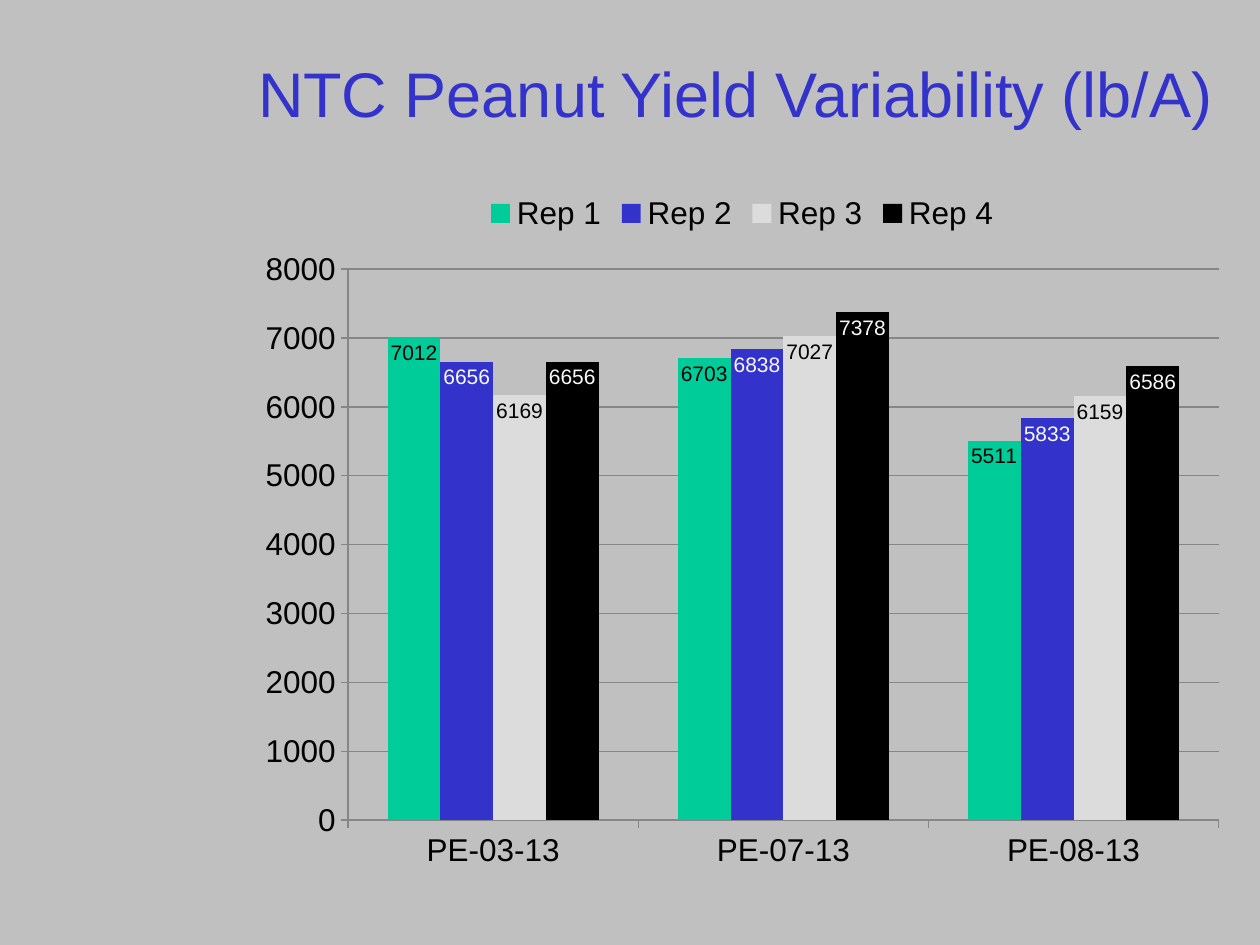
"""Build a slide with a clustered column chart of peanut yields."""
import pptx
import pptx.chart.data
import pptx.dml.color
import pptx.enum.chart
import pptx.enum.text
import pptx.util
from pptx.util import Inches

TITLE = "NTC Peanut Yield Variability (lb/A)"
FIELDS = ["PE-03-13", "PE-07-13", "PE-08-13"]
REPS = [
    ("Rep 1", (7012, 6703, 5511), "00CC99", "000000"),
    ("Rep 2", (6656, 6838, 5833), "3333CC", "F8F8F8"),
    ("Rep 3", (6169, 7027, 6159), "DCDCDC", "000000"),
    ("Rep 4", (6656, 7378, 6586), "000000", "F8F8F8"),
]
LEFT = 1.95


def paint(fill, color):
    fill.solid()
    fill.fore_color.rgb = pptx.dml.color.RGBColor.from_string(color)


def style(font, size, color):
    font.name = "Arial"
    font.size = pptx.util.Pt(size)
    font.bold = False
    paint(font.fill, color)


def add_text(page, text, *, left, top, width, height, size, color):
    box = page.shapes.add_textbox(Inches(left), Inches(top), Inches(width), Inches(height))
    frame = box.text_frame
    frame.word_wrap = True
    frame.vertical_anchor = pptx.enum.text.MSO_ANCHOR.MIDDLE
    span = frame.paragraphs[0].add_run()
    span.text = text
    style(span.font, size, color)


def add_yield_chart(page):
    data = pptx.chart.data.CategoryChartData(number_format="General")
    data.categories = FIELDS
    for name, yields, *_ in REPS:
        data.add_series(name, yields)
    kinds = pptx.enum.chart
    chart = page.shapes.add_chart(
        kinds.XL_CHART_TYPE.COLUMN_CLUSTERED,
        Inches(LEFT), Inches(1.43), Inches(7.88), Inches(5.57), data,
    ).chart
    style(chart.font, 18, "000000")
    chart.has_title = False
    chart.has_legend = True
    chart.legend.position = kinds.XL_LEGEND_POSITION.TOP
    chart.legend.include_in_layout = False

    for axis in (chart.category_axis, chart.value_axis):
        axis.major_tick_mark = kinds.XL_TICK_MARK.OUTSIDE
        paint(axis.format.line.fill, "868686")
    axis = chart.value_axis
    axis.minimum_scale, axis.maximum_scale, axis.major_unit = 0, 8000, 1000
    axis.has_major_gridlines = True
    paint(axis.major_gridlines.format.line.fill, "868686")

    plot = chart.plots[0]
    plot.gap_width = 150
    plot.overlap = 0
    plot.vary_by_categories = False
    for series, (_, _, color, label_color) in zip(plot.series, REPS):
        paint(series.format.fill, color)
        series.invert_if_negative = False
        labels = series.data_labels
        labels.show_value = True
        labels.position = kinds.XL_LABEL_POSITION.INSIDE_END
        style(labels.font, 12, label_color)


def main():
    deck = pptx.Presentation()
    deck.slide_width, deck.slide_height = Inches(10), Inches(7.5)
    page = deck.slides.add_slide(deck.slide_layouts[6])
    paint(page.background.fill, "C0C0C0")
    add_text(page, TITLE, left=LEFT, top=0.11, width=7.97, height=1.25, size=36, color="3333CC")
    add_yield_chart(page)
    deck.save("out.pptx")


if __name__ == "__main__":
    main()
